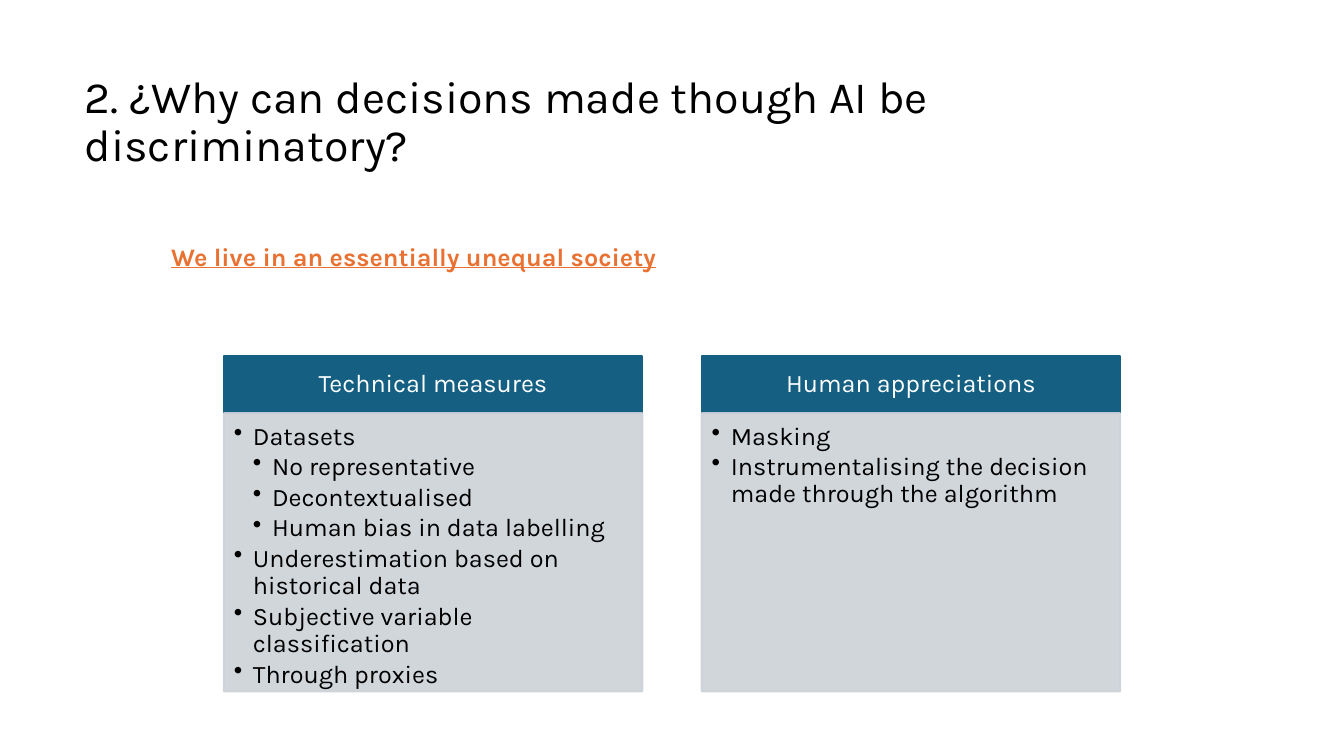
from pptx import Presentation
from pptx.dml.color import RGBColor
from pptx.enum.shapes import MSO_SHAPE as Shape
from pptx.enum.text import MSO_ANCHOR as Anchor, PP_ALIGN as Align
from pptx.oxml.ns import qn
from pptx.util import Inches, Pt
from lxml.etree import SubElement

FONT = "Karla"
BLACK, WHITE, ORANGE, TEAL, GREY = "000000", "FFFFFF", "E97132", "156082", "CCD2D8"
COLUMN_WIDTH, COLUMN_PITCH = 4.15, 4.74
HEADER_HEIGHT, BODY_HEIGHT = 0.57, 2.76
INDENT = 0.19

# Each point is (depth, text)
COLUMNS = [
    ("Technical measures", [
        (1, "Datasets"),
        (2, "No representative"),
        (2, "Decontextualised"),
        (2, "Human bias in data labelling"),
        (1, "Underestimation based on historical data"),
        (1, "Subjective variable classification"),
        (1, "Through proxies"),
    ]),
    ("Human appreciations", [
        (1, "Masking"),
        (1, "Instrumentalising the decision made through the algorithm"),
    ]),
]


def rgb(color):
    return RGBColor.from_string(color)


def add_run(paragraph, text, size, color):
    run = paragraph.add_run()
    run.text = text
    run.font.name = FONT
    run.font.size = Pt(size)
    run.font.color.rgb = rgb(color)
    return run


def set_frame(frame, anchor, insets=(0.1, 0.05, 0.1, 0.05)):
    frame.word_wrap = True
    frame.vertical_anchor = anchor
    (frame.margin_left, frame.margin_top,
     frame.margin_right, frame.margin_bottom) = map(Inches, insets)


def add_panel(slide, left, top, width, height, color, opacity=100):
    panel = slide.shapes.add_shape(
        Shape.RECTANGLE, Inches(left), Inches(top), Inches(width), Inches(height))
    panel.shadow.inherit = False
    panel.fill.solid()
    panel.line.width = Pt(1.5)
    for fill in (panel.fill.fore_color, panel.line.color):
        fill.rgb = rgb(color)
    if opacity < 100:
        for value in panel._element.spPr.iter(qn("a:srgbClr")):
            SubElement(value, qn("a:alpha"), val=str(opacity * 1000))
    return panel


def add_bullet(paragraph, depth):
    paragraph.level = depth
    properties = paragraph._p.get_or_add_pPr()
    properties.set("marL", str(Inches(INDENT * depth)))
    properties.set("indent", str(-Inches(INDENT)))
    SubElement(properties, qn("a:buChar"), char="•")


def add_text_line(slide, left, top, width, height, text, size, color, anchor):
    box = slide.shapes.add_textbox(
        Inches(left), Inches(top), Inches(width), Inches(height))
    set_frame(box.text_frame, anchor)
    paragraph = box.text_frame.paragraphs[0]
    return paragraph, add_run(paragraph, text, size, color)


def add_title(slide, left, top, width, height):
    paragraph, _ = add_text_line(
        slide, left, top, width, height,
        "2. ¿Why can decisions made though AI be discriminatory?",
        32, BLACK, Anchor.MIDDLE)
    paragraph.line_spacing = 0.9


def add_statement(slide, left, top, width, height):
    _, statement = add_text_line(
        slide, left, top, width, height,
        "We live in an essentially unequal society", 18, ORANGE, Anchor.TOP)
    statement.font.bold = True
    statement.font.underline = True


def add_column(slide, left, top, heading, points):
    # Header
    header = add_panel(slide, left, top, COLUMN_WIDTH, HEADER_HEIGHT, TEAL)
    set_frame(header.text_frame, Anchor.MIDDLE, (0.14, 0.08, 0.14, 0.08))
    paragraph = header.text_frame.paragraphs[0]
    paragraph.alignment = Align.CENTER
    paragraph.line_spacing = 0.9
    add_run(paragraph, heading, 18, WHITE)

    # Bulleted body
    body = add_panel(slide, left, top + HEADER_HEIGHT, COLUMN_WIDTH, BODY_HEIGHT,
                     GREY, opacity=90)
    frame = body.text_frame
    set_frame(frame, Anchor.TOP, (0.1, 0.1, 0.14, 0.16))
    for index, (depth, text) in enumerate(points):
        paragraph = frame.add_paragraph() if index else frame.paragraphs[0]
        add_bullet(paragraph, depth)
        paragraph.alignment = Align.LEFT
        paragraph.line_spacing = 0.9
        paragraph.space_after = Pt(2.4)
        add_run(paragraph, text, 18, BLACK)


def main():
    deck = Presentation()
    deck.slide_width, deck.slide_height = Inches(13.33), Inches(7.5)
    slide = deck.slides.add_slide(deck.slide_layouts[6])
    add_title(slide, 0.74, 0.66, 11.51, 1.12)
    for index, (heading, points) in enumerate(COLUMNS):
        add_column(slide, 2.22 + index * COLUMN_PITCH, 3.53, heading, points)
    add_statement(slide, 1.6, 2.34, 9.51, 0.4)
    deck.save("out.pptx")


if __name__ == "__main__":
    main()
